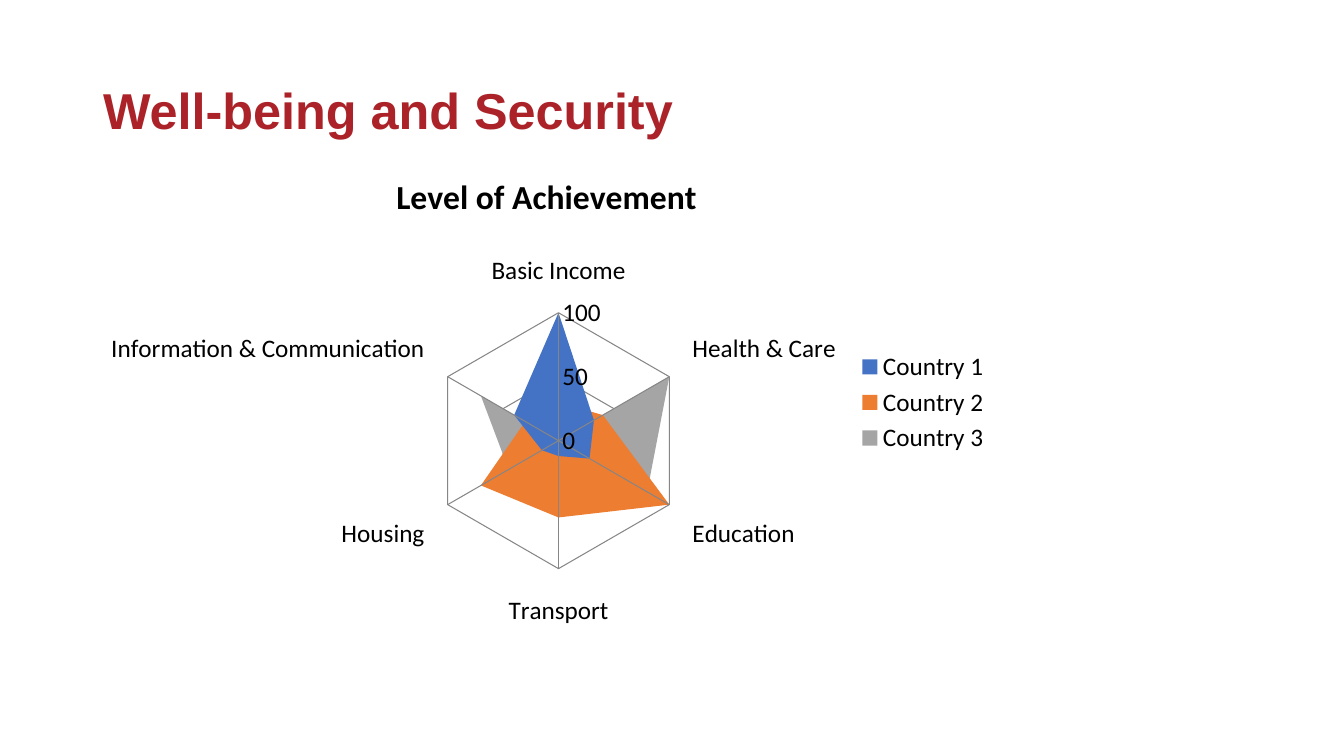
import pptx
import pptx.chart.data
import pptx.dml.color
import pptx.enum.chart
import pptx.enum.text
import pptx.util

SCALE = 914400 / 100.8  # EMU per px

CATEGORIES = ["Basic Income", "Health & Care", "Education", "Transport",
              "Housing", "Information & Communication"]
SERIES = [
    ("Country 1", "4472C4", [100, 32, 28, 12, 15, 40]),
    ("Country 2", "ED7D31", [30, 40, 100, 60, 70, 30]),
    ("Country 3", "A5A5A5", [0, 100, 80, 20, 45, 70]),
]


def px(n):
    return pptx.util.Emu(round(n * SCALE))


def rgb(color):
    return pptx.dml.color.RGBColor.from_string(color)


def set_all(obj, values):
    for name, value in values.items():
        setattr(obj, name, value)


class Deck:
    title_font = {"name": "Arial", "size": pptx.util.Pt(36), "bold": True}
    chart_font = {"name": "Calibri", "size": pptx.util.Pt(18), "bold": False}
    heading_font = {"name": "Calibri", "size": pptx.util.Pt(24), "bold": True}
    red, black, grid = "AB2328", "000000", "868686"

    def __init__(self, width, height):
        self.prs = pptx.Presentation()
        set_all(self.prs, {"slide_width": px(width), "slide_height": px(height)})
        self.s = self.prs.slides.add_slide(self.prs.slide_layouts[5])

    def font(self, font, values, color):
        set_all(font, values)
        font.color.rgb = rgb(color)

    def line(self, fmt):
        fmt.line.color.rgb = rgb(self.grid)
        fmt.line.width = pptx.util.Pt(0.75)

    def title(self, text, x, y, w, h):
        sp = self.s.shapes.title
        set_all(sp, {"left": px(x), "top": px(y), "width": px(w), "height": px(h)})
        tf = sp.text_frame
        set_all(tf, {"word_wrap": True,
                     "vertical_anchor": pptx.enum.text.MSO_ANCHOR.MIDDLE})
        p = tf.paragraphs[0]
        set_all(p, {"alignment": pptx.enum.text.PP_ALIGN.LEFT, "line_spacing": 0.9})
        r = p.add_run()
        r.text = text
        self.font(r.font, self.title_font, self.red)

    def radar(self, heading, categories, series, x, y, w, h):
        data = pptx.chart.data.CategoryChartData()
        data.categories = categories
        for name, _, values in series:
            data.add_series(name, values)
        chart = self.s.shapes.add_chart(
            pptx.enum.chart.XL_CHART_TYPE.RADAR_FILLED,
            px(x), px(y), px(w), px(h), data).chart
        self.font(chart.font, self.chart_font, self.black)

        # Heading
        chart.has_title = True
        chart.chart_title.include_in_layout = False
        r = chart.chart_title.text_frame.paragraphs[0].add_run()
        r.text = heading
        self.font(r.font, self.heading_font, self.black)

        # Legend
        chart.has_legend = True
        set_all(chart.legend, {"include_in_layout": False,
                               "position": pptx.enum.chart.XL_LEGEND_POSITION.RIGHT})

        # Axes
        for axis in (chart.category_axis, chart.value_axis):
            set_all(axis, {"has_major_gridlines": True,
                           "major_tick_mark": pptx.enum.chart.XL_TICK_MARK.NONE,
                           "minor_tick_mark": pptx.enum.chart.XL_TICK_MARK.NONE})
            self.line(axis.major_gridlines.format)
        chart.category_axis.format.line.fill.background()
        self.line(chart.value_axis.format)
        set_all(chart.value_axis, {"minimum_scale": 0, "maximum_scale": 100,
                                   "major_unit": 50})

        # Series colours
        plot = chart.plots[0]
        plot.vary_by_categories = False
        for ser, (_, color, _) in zip(plot.series, series):
            ser.format.fill.solid()
            ser.format.fill.fore_color.rgb = rgb(color)
            ser.format.line.fill.background()


def main():
    deck = Deck(1344, 756)
    deck.title("Well-being and Security", 93, 40, 1159, 146)
    deck.radar("Level of Achievement", CATEGORIES, SERIES, 93, 153, 907, 499)
    deck.prs.save("out.pptx")


if __name__ == "__main__":
    main()
